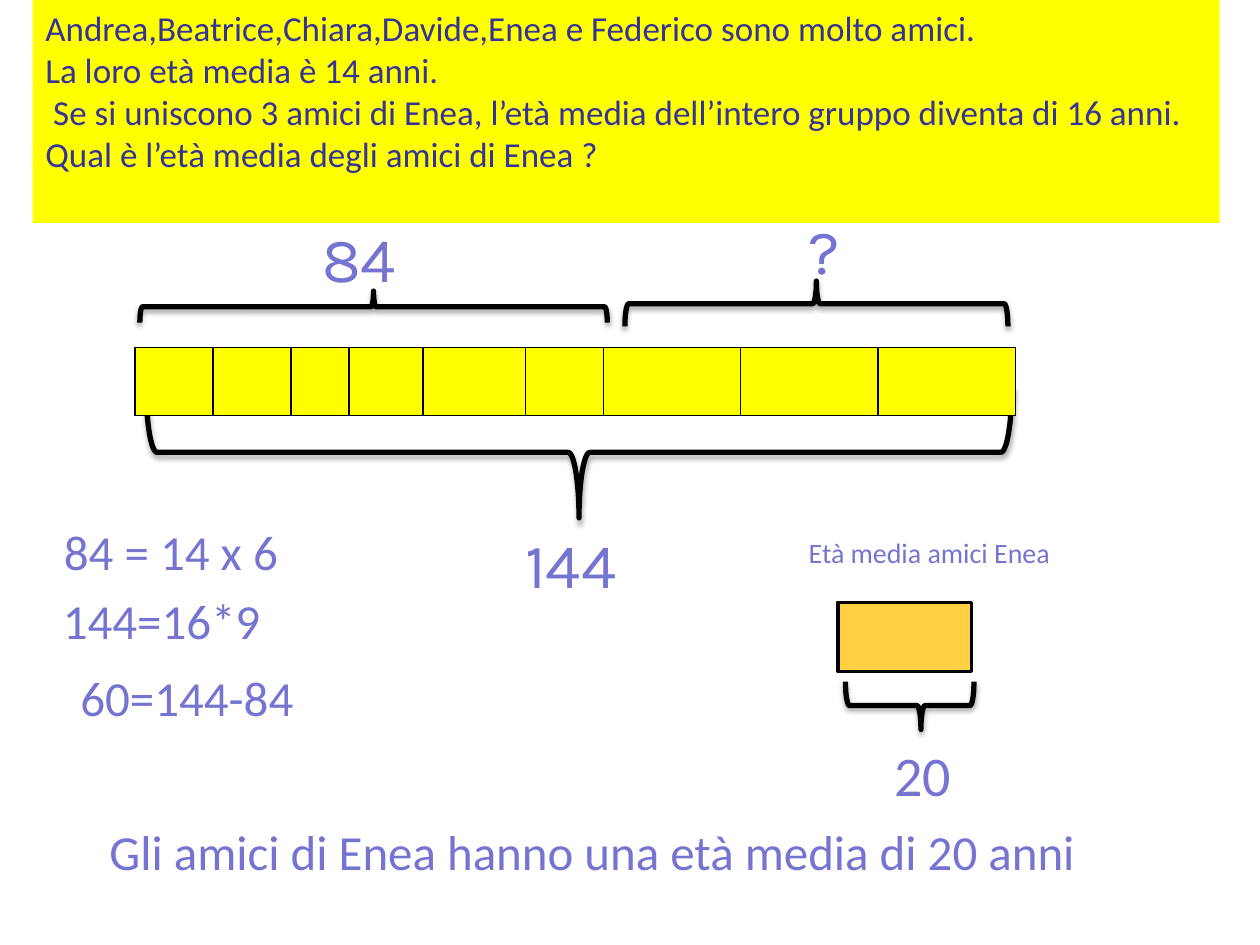
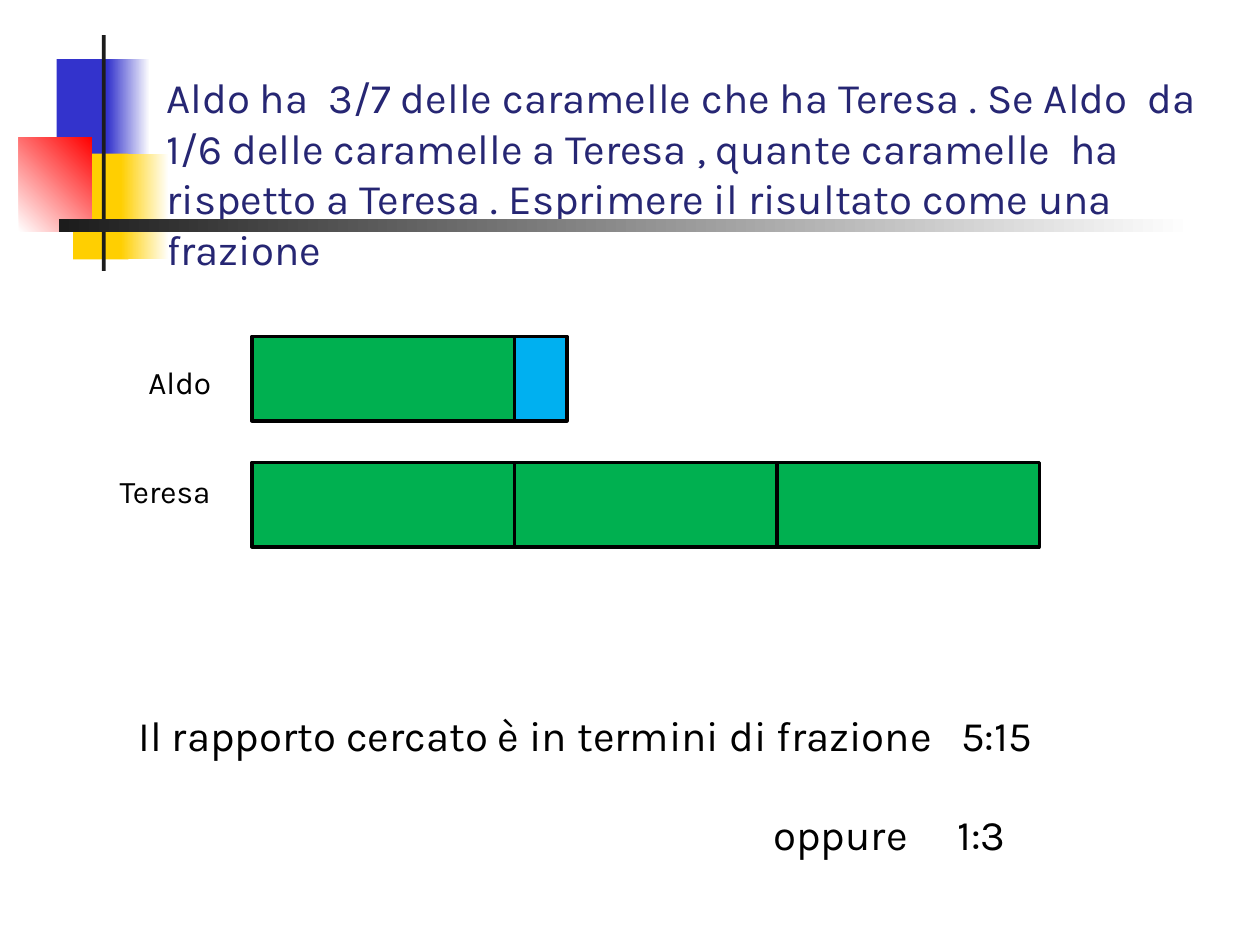
from dataclasses import dataclass

from lxml import etree
from pptx import Presentation
from pptx.dml.color import RGBColor
from pptx.enum.shapes import MSO_SHAPE
from pptx.enum.text import MSO_ANCHOR, MSO_AUTO_SIZE, PP_ALIGN
from pptx.oxml.ns import qn
from pptx.util import Inches, Pt

RECT, BRACE = MSO_SHAPE.RECTANGLE, MSO_SHAPE.RIGHT_BRACE
TOP, LEFT, NO_FIT = MSO_ANCHOR.TOP, PP_ALIGN.LEFT, MSO_AUTO_SIZE.NONE
TITLE_ONLY = 5


@dataclass(frozen=True)
class Theme:
    # Fonts
    sans: str = "Calibri"
    karla: str = "Karla"
    # Colours
    black: str = "000000"
    white: str = "FFFFFF"
    yellow: str = "FFFF00"
    indigo: str = "333399"
    navy: str = "262673"
    lilac: str = "7575D1"
    amber: str = "FFC000"
    green: str = "00B050"
    sky: str = "00B0F0"
    blue: str = "3333CC"
    gold: str = "FFCF01"
    red: str = "FF0000"
    ink: str = "1C1C1C"
    # Type sizes
    note: int = 16
    name: int = 18
    problem: int = 20
    text: int = 24
    step: int = 28
    result: int = 32
    total: int = 36


def rgb(color):
    return RGBColor.from_string(color)


def add_xml(parent, tag, **attrs):
    return etree.SubElement(parent, qn(tag), {k: str(v) for k, v in attrs.items()})


class Deck:
    def __init__(self, theme):
        self.t = theme
        self.prs = Presentation()
        self.prs.slide_width, self.prs.slide_height = Inches(10), Inches(7.5)
        self.s = None

    def style_text(self, tf, lines, font, size, color):
        tf.word_wrap, tf.auto_size, tf.vertical_anchor = True, NO_FIT, TOP
        tf.text = "\n".join(lines)
        for p in tf.paragraphs:
            p.alignment = LEFT
            p.font.name, p.font.size = font, Pt(size)
            p.font.color.rgb = rgb(color)

    def slide(self, lines, box, font, size, color, fill=None):
        """Start a slide whose title states the problem."""
        self.s = self.prs.slides.add_slide(self.prs.slide_layouts[TITLE_ONLY])
        title = self.s.shapes.title
        title.left, title.top, title.width, title.height = map(Inches, box)
        self.style_text(title.text_frame, lines, font, size, color)
        if fill:
            title.fill.solid()
            title.fill.fore_color.rgb = rgb(fill)

    def text(self, text, x, y, w, h, size, font=None, color=None, tab=None):
        tb = self.s.shapes.add_textbox(*map(Inches, (x, y, w, h)))
        self.style_text(tb.text_frame, [text], font or self.t.sans, size,
                        color or self.t.lilac)
        if tab:
            pPr = tb.text_frame.paragraphs[0]._p.get_or_add_pPr()
            tabs = etree.Element(qn("a:tabLst"))
            add_xml(tabs, "a:tab", pos=Inches(tab), algn="l")
            pPr.insert_element_before(tabs, "a:defRPr", "a:extLst")

    def rect(self, x, y, w, h, fill, line=None, alpha=None):
        sp = self.s.shapes.add_shape(RECT, *map(Inches, (x, y, w, h)))
        sp.shadow.inherit = False
        sp.fill.solid()
        sp.fill.fore_color.rgb = rgb(fill)
        if alpha:
            clr = sp._element.spPr.find(".//" + qn("a:srgbClr"))
            add_xml(clr, "a:alpha", val=alpha * 1000)
        if line:
            sp.line.color.rgb, sp.line.width = rgb(self.t.black), Pt(line)
        else:
            sp.line.fill.background()
        return sp

    def fade(self, x, y, w, h, start, end, angle=0):
        sp = self.rect(x, y, w, h, start)
        sp.fill.gradient()
        sp.fill.gradient_angle = angle
        for stop, color in zip(sp.fill.gradient_stops, (start, end)):
            stop.color.rgb = rgb(color)

    def brace(self, x, y, w, h, rotation, tip=0.5):
        """Horizontal brace in the box x, y, w, h: 270 points up, 90 down."""
        left, top = x + (w - h) / 2, y + (h - w) / 2
        sp = self.s.shapes.add_shape(BRACE, *map(Inches, (left, top, h, w)))
        sp.rotation = rotation
        sp.adjustments[1] = tip
        sp.fill.background()
        sp.line.color.rgb, sp.line.width = rgb(self.t.black), Pt(3)
        sp.shadow.inherit = False
        effects = sp._element.spPr.find(qn("a:effectLst"))
        shadow = add_xml(effects, "a:outerShdw", blurRad=Pt(3.1), dist=Pt(1.8),
                         dir=90 * 60000, rotWithShape=0)
        clr = add_xml(shadow, "a:srgbClr", val=self.t.black)
        add_xml(clr, "a:alpha", val=35000)

    def strip(self, x, y, widths, h, fill):
        """One-row table of filled, outlined cells."""
        table = self.s.shapes.add_table(
            1, len(widths), *map(Inches, (x, y, sum(widths), h))).table
        table.first_row = table.horz_banding = False
        for col, cell, width in zip(table.columns, table.rows[0].cells, widths):
            col.width = Inches(width)
            tcPr = cell._tc.get_or_add_tcPr()
            for side in ("a:lnL", "a:lnR", "a:lnT", "a:lnB"):
                ln = add_xml(tcPr, side, w=Pt(1))
                add_xml(add_xml(ln, "a:solidFill"), "a:srgbClr", val=self.t.black)
            cell.fill.solid()
            cell.fill.fore_color.rgb = rgb(fill)


def average_age(d):
    t = d.t
    d.slide(["Andrea,Beatrice,Chiara,Davide,Enea e Federico sono molto amici.",
             "La loro età media è 14 anni.",
             " Se si uniscono 3 amici di Enea, l’età media dell’intero gruppo "
             "diventa di 16 anni.",
             "Qual è l’età media degli amici di Enea ?"],
            (0.26, 0, 9.42, 1.77), t.sans, t.problem, t.indigo, t.yellow)

    # Ages strip with its braces and totals
    d.brace(1.11, 2.31, 3.71, 0.25, 270)
    d.brace(4.96, 2.23, 3.04, 0.36, 270)
    d.brace(1.16, 3.07, 6.87, 1.04, 90)
    d.strip(1.07, 2.76, [0.62, 0.62, 0.46, 0.59, 0.81, 0.62] + [1.09] * 3,
            0.54, t.yellow)
    for total, x, y, w in (("84", 2.46, 1.69, 1.23), ("?", 6.32, 1.63, 0.61),
                           ("144", 4.07, 4.12, 1.23)):
        d.text(total, x, y, w, 0.71, t.total, t.karla)

    # Calculation and answer
    for step, x, y, w in (("84 = 14 x 6", 0.41, 4.09, 2.4),
                          ("144=16*9", 0.4, 4.64, 2.5),
                          ("60=144-84", 0.54, 5.25, 2.47),
                          ("Gli amici di Enea hanno una età media di 20 anni",
                           0.77, 6.47, 8.91)):
        d.text(step, x, y, w, 0.57, t.step)

    # Average age of one friend
    d.text("Età media amici Enea", 6.32, 4.2, 2.85, 0.37, t.note)
    d.rect(6.65, 4.78, 1.06, 0.55, t.amber, line=2, alpha=74)
    d.brace(6.71, 5.41, 1.02, 0.38, 90, tip=0.413)
    d.text("20", 7, 5.83, 0.79, 0.64, t.result)


def sweets(d):
    t = d.t
    d.slide(["Aldo ha  3/7 delle caramelle che ha Teresa . Se Aldo  da 1/6 delle "
             "caramelle a Teresa , quante caramelle  ha rispetto a Teresa . "
             "Esprimere il risultato come una frazione"],
            (1.22, 0.52, 8.78, 1.31), t.karla, t.text, t.navy)

    # Bars: a green block is five units, the blue one is the unit given away
    unit, x0, h = 2.5 / 6, 2, 0.67
    block = 5 * unit
    aldo_y, teresa_y = 2.67, 3.67
    d.rect(x0 + block, aldo_y, unit, h, t.sky, line=2)
    for y, blocks in ((aldo_y, 1), (teresa_y, 3)):
        for i in range(blocks):
            d.rect(x0 + i * block, y, block, h, t.green, line=2)
    d.text("Aldo", 1.08, 2.83, 0.83, 0.4, t.name, t.karla, t.black)
    d.text("Teresa", 0.85, 3.7, 1.15, 0.4, t.name, t.karla, t.black)

    # Answer
    d.text("Il rapporto cercato è in termini di frazione\t5:15",
           1, 5.58, 7.75, 0.51, t.text, t.karla, t.black, tab=6.53)
    d.text("oppure\t1:3", 6.04, 6.37, 2.62, 0.5, t.text, t.karla, t.black, tab=1.46)

    # Corner ornament and rule
    d.rect(0.45, 0.47, 0.45, 0.84, t.blue)
    d.fade(0.85, 0.47, 0.34, 0.84, t.blue, t.white)
    d.rect(0.58, 1.22, 0.44, 0.84, t.gold)
    d.fade(0.96, 1.22, 0.38, 0.84, t.gold, t.white)
    d.fade(0.15, 1.09, 0.58, 0.75, t.white, t.red, angle=45)
    d.rect(0.81, 0.28, 0.03, 1.87, t.ink)
    d.fade(0.47, 1.74, 9, 0.1, t.ink, t.white)


def main():
    d = Deck(Theme())
    average_age(d)
    sweets(d)
    d.prs.save("out.pptx")


if __name__ == "__main__":
    main()
